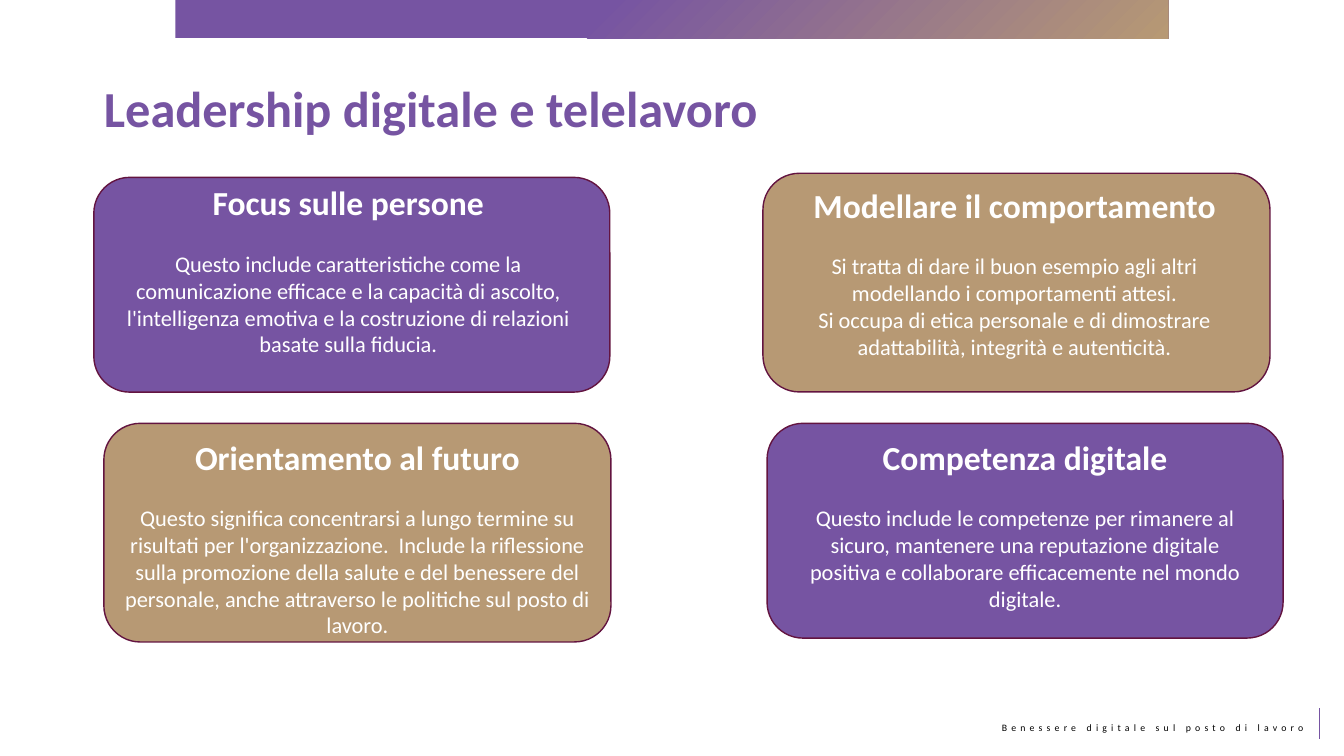
from lxml import etree
from pptx import Presentation
from pptx.dml.color import RGBColor
from pptx.enum import shapes, text
from pptx.oxml import ns, parse_xml
from pptx.util import Pt

FONT = "Calibri"
COLORS = {"purple": "7654A2", "gold": "B79974", "plum": "631440",
          "white": "FFFFFF", "black": "000000"}
PURPLE_SIZE, GOLD_SIZE = (368.6, 153.4), (362.2, 156.2)

# Fill, card corner, text area (left, top, width, height), heading, body
CARDS = [
    ("purple", (67, 126.7), (71.3, 126.7, 355, 113.8), "Focus sulle persone",
     ["Questo include caratteristiche come la comunicazione efficace e la "
      "capacità di ascolto, l'intelligenza emotiva e la costruzione di "
      "relazioni basate sulla fiducia."]),
    ("gold", (545, 123.8), (547.9, 128.2, 353.5, 133.2), "Modellare il comportamento",
     ["Si tratta di dare il buon esempio agli altri modellando i "
      "comportamenti attesi.",
      "Si occupa di etica personale e di dimostrare adattabilità, "
      "integrità e autenticità."]),
    ("purple", (547.9, 302.4), (569.5, 308.2, 325.4, 113.8), "Competenza digitale",
     ["Questo include le competenze per rimanere al sicuro, mantenere una "
      "reputazione digitale positiva e collaborare efficacemente nel mondo "
      "digitale."]),
    ("gold", (74.2, 302.4), (74.2, 308.2, 362.2, 149), "Orientamento al futuro",
     ["Questo significa concentrarsi a lungo termine su",
      "risultati per l'organizzazione.  Include la riflessione sulla "
      "promozione della salute e del benessere del personale, anche "
      "attraverso le politiche sul posto di lavoro."]),
]


def rgb(name):
    return RGBColor.from_string(COLORS[name])


def write(para, words, size, color, bold=False, align=text.PP_ALIGN.CENTER):
    para.text = words
    para.alignment = align
    font = para.font
    font.name, font.size, font.bold = FONT, Pt(size), bold
    font.color.rgb = rgb(color)


def add_text_box(page, left, top, width, height):
    box = page.shapes.add_textbox(Pt(left), Pt(top), Pt(width), Pt(height))
    box.text_frame.word_wrap = True
    return box.text_frame


def add_card(page, fill, corner, area, heading, body):
    size = PURPLE_SIZE if fill == "purple" else GOLD_SIZE
    card = page.shapes.add_shape(shapes.MSO_SHAPE.ROUNDED_RECTANGLE,
                                 *map(Pt, corner + size))
    card.shadow.inherit = False
    card.fill.solid()
    card.fill.fore_color.rgb = rgb(fill)
    card.line.color.rgb = rgb("plum")
    card.line.width = Pt(1)

    frame = add_text_box(page, *area)
    write(frame.paragraphs[0], heading, 24, "white", bold=True)
    frame.paragraphs[0].space_after = Pt(19.5)
    for words in body:
        write(frame.add_paragraph(), words, 16, "white")


def add_banner(page):
    banner = page.shapes.add_shape(shapes.MSO_SHAPE.RECTANGLE,
                                   Pt(125.3), Pt(0), Pt(709.2), Pt(27.4))
    banner.shadow.inherit = False
    banner.line.fill.background()
    # Radial gradient centred on the bottom right corner
    gradient = parse_xml(
        f'<a:gradFill {ns.nsdecls("a")} rotWithShape="1"><a:gsLst>'
        f'<a:gs pos="0"><a:srgbClr val="{COLORS["gold"]}"/></a:gs>'
        f'<a:gs pos="58000"><a:srgbClr val="{COLORS["purple"]}"/></a:gs>'
        '</a:gsLst><a:path path="circle">'
        '<a:fillToRect l="100000" t="100000"/></a:path></a:gradFill>')
    banner._element.spPr.find(ns.qn("a:prstGeom")).addnext(gradient)


def add_title(page, words):
    title = page.shapes.title
    title.left, title.top, title.width, title.height = map(Pt, (67, 49, 825, 63.4))
    frame = title.text_frame
    frame.vertical_anchor = text.MSO_ANCHOR.TOP
    frame.margin_top = Pt(6)
    write(frame.paragraphs[0], words, 36, "purple", True, text.PP_ALIGN.LEFT)


def add_footer(page, words):
    para = add_text_box(page, 697, 511.9, 241.2, 15.8).paragraphs[0]
    write(para, words, 7, "black", align=text.PP_ALIGN.RIGHT)
    para.runs[0].font._element.set("spc", "300")  # letter spacing
    rule = page.shapes.add_connector(shapes.MSO_CONNECTOR.STRAIGHT,
                                     Pt(942.5), Pt(527.8), Pt(942.5), Pt(505.4))
    rule.line.color.rgb = rgb("purple")
    rule.line.width = Pt(0.75)
    etree.SubElement(rule._element.spPr, ns.qn("a:effectLst"))


def main():
    deck = Presentation()
    deck.slide_width, deck.slide_height = Pt(960), Pt(540)
    page = deck.slides.add_slide(deck.slide_layouts.get_by_name("Title Only"))
    add_footer(page, "Benessere digitale sul posto di lavoro")
    add_banner(page)
    add_title(page, "Leadership digitale e telelavoro")
    for card in CARDS:
        add_card(page, *card)
    deck.save("out.pptx")


if __name__ == "__main__":
    main()
